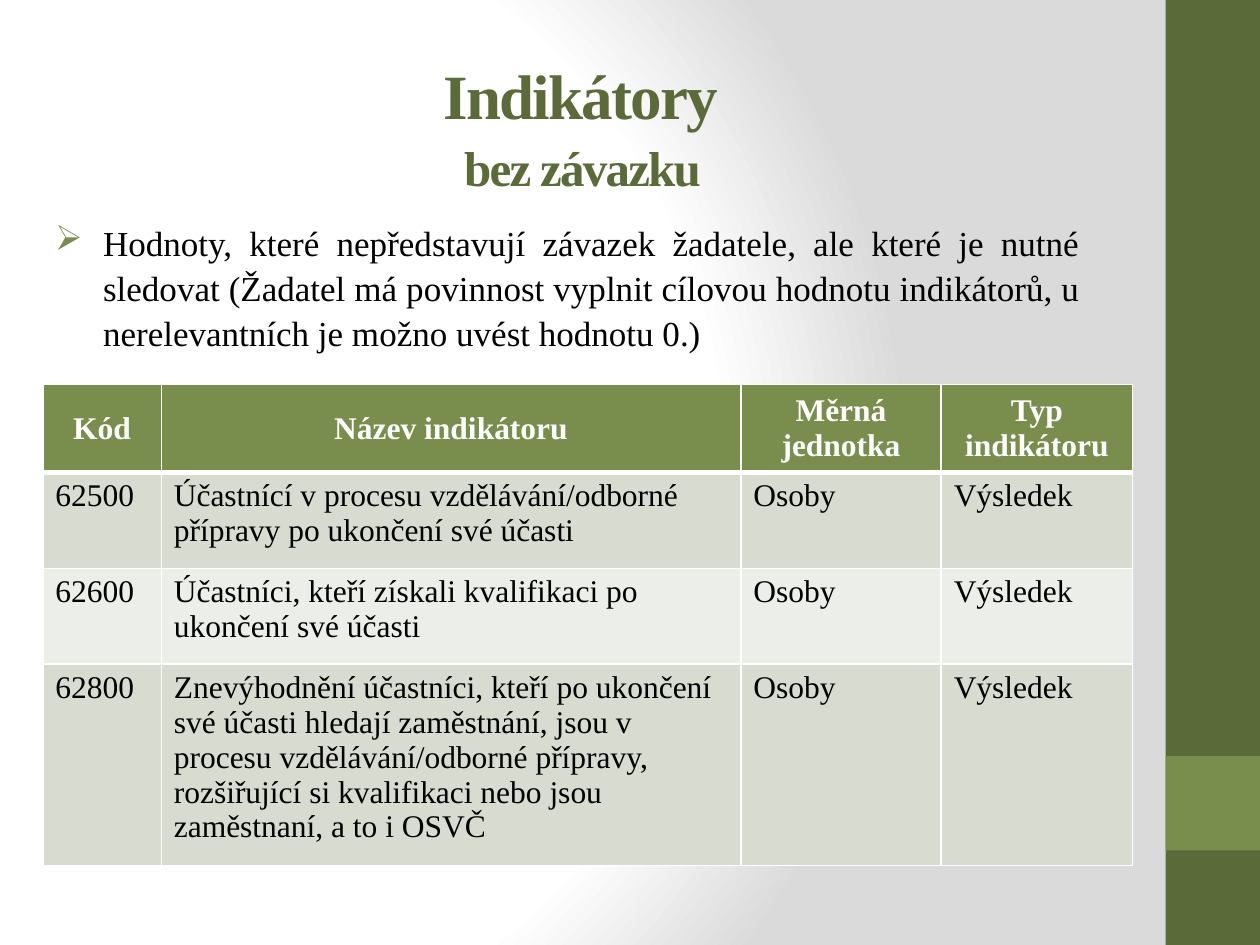
from lxml.etree import SubElement, fromstring
from pptx import Presentation
from pptx.dml.color import RGBColor
from pptx.enum.shapes import MSO_SHAPE
from pptx.enum.text import MSO_ANCHOR, PP_ALIGN
from pptx.oxml.ns import nsdecls, qn
from pptx.util import Inches, Pt

DARK_GREEN = RGBColor(0x5A, 0x6A, 0x39)
GREEN = RGBColor(0x79, 0x8E, 0x4C)
BAND_DARK = RGBColor(0xD7, 0xDB, 0xD0)
BAND_LIGHT = RGBColor(0xEC, 0xEE, 0xE9)
WHITE = RGBColor(0xFF, 0xFF, 0xFF)
BLACK = RGBColor(0x00, 0x00, 0x00)
GRAY = RGBColor(0xDA, 0xDA, 0xDA)
FONT = "Times New Roman"

TITLE = [("Indikátory ", 36), ("bez závazku ", 28)]
BODY = (
    "Hodnoty, které nepředstavují závazek žadatele, ale které je nutné sledovat "
    "(Žadatel má povinnost vyplnit cílovou hodnotu indikátorů, u nerelevantních "
    "je možno uvést hodnotu 0.)"
)
HEADER = ["Kód", "Název indikátoru", "Měrná jednotka", "Typ indikátoru"]
INDICATORS = [
    ("62500", "Účastnící v procesu vzdělávání/odborné přípravy po ukončení své účasti"),
    ("62600", "Účastníci, kteří získali kvalifikaci po ukončení své účasti"),
    ("62800", "Znevýhodnění účastníci, kteří po ukončení své účasti hledají zaměstnání, "
              "jsou v procesu vzdělávání/odborné přípravy, rozšiřující si kvalifikaci "
              "nebo jsou zaměstnaní, a to i OSVČ"),
]
ROWS = [HEADER] + [[code, name, "Osoby", "Výsledek"] for code, name in INDICATORS]
COLUMN_WIDTHS = [0.94, 4.6, 1.59, 1.52]
ROW_HEIGHTS = [0.65, 0.76, 0.76, 1.48]
SIDE_BARS = [(0, 7.5, DARK_GREEN), (6, 0.75, GREEN)]
GRADIENT_STOPS = [(0, WHITE), (75, WHITE), (100, GRAY)]


def add_run(paragraph, text, size, color, bold=False):
    run = paragraph.add_run()
    run.text = text
    for name, value in {"name": FONT, "size": Pt(size), "bold": bold}.items():
        setattr(run.font, name, value)
    run.font.color.rgb = color
    return run


def set_background(slide):
    slide.background.fill.solid()
    solid = slide.element.find(".//" + qn("p:bgPr")).find(qn("a:solidFill"))
    stops = "".join(
        f'<a:gs pos="{position * 1000}"><a:srgbClr val="{color}"/></a:gs>'
        for position, color in GRADIENT_STOPS
    )
    gradient = fromstring(
        f'<a:gradFill {nsdecls("a")} rotWithShape="1"><a:gsLst>{stops}</a:gsLst>'
        '<a:path path="circle"><a:fillToRect l="20000" t="50000" r="100000" b="50000"/>'
        "</a:path></a:gradFill>"
    )
    solid.getparent().replace(solid, gradient)


def add_side_bars(slide):
    for top, height, color in SIDE_BARS:
        bar = slide.shapes.add_shape(
            MSO_SHAPE.RECTANGLE, Inches(9.25), Inches(top), Inches(0.75), Inches(height)
        )
        bar.shadow.inherit = False
        bar.fill.solid()
        bar.fill.fore_color.rgb = color
        bar.line.fill.background()


def add_text(slide, left, top, width, height, alignment, line_spacing):
    box = slide.shapes.add_textbox(Inches(left), Inches(top), Inches(width), Inches(height))
    box.text_frame.word_wrap = True
    paragraph = box.text_frame.paragraphs[0]
    paragraph.alignment = alignment
    paragraph.line_spacing = line_spacing
    return box.text_frame, paragraph


def add_title(slide):
    frame, paragraph = add_text(slide, 0.5, 0.55, 8.33, 0.85, PP_ALIGN.CENTER, 1.1)
    frame.vertical_anchor = MSO_ANCHOR.MIDDLE
    for index, (text, size) in enumerate(TITLE):
        if index:
            paragraph.add_line_break()
        run = add_run(paragraph, text, size, DARK_GREEN, True)
        run.font._element.set("spc", "-100")


def add_body(slide):
    frame, paragraph = add_text(slide, 0.34, 1.68, 8.33, 1.2, PP_ALIGN.JUSTIFY, 1.08)
    add_run(paragraph, BODY, 20, BLACK)
    properties = paragraph._p.get_or_add_pPr()
    properties.set("marL", str(Inches(0.38)))
    properties.set("indent", str(-Inches(0.38)))
    bullet_color = SubElement(properties, qn("a:buClr"))
    SubElement(bullet_color, qn("a:srgbClr")).set("val", str(GREEN))
    SubElement(properties, qn("a:buChar")).set("char", "➢")


def set_borders(cell, bottom_width):
    properties = cell._tc.get_or_add_tcPr()
    widths = {"lnL": 1, "lnR": 1, "lnT": 1, "lnB": bottom_width}
    for index, (side, width) in enumerate(widths.items()):
        line = fromstring(
            f'<a:{side} {nsdecls("a")} w="{Pt(width)}"><a:solidFill>'
            f'<a:srgbClr val="{WHITE}"/></a:solidFill></a:{side}>'
        )
        properties.insert(index, line)


def add_indicator_table(slide):
    table = slide.shapes.add_table(
        len(ROWS), len(HEADER), Inches(0.34), Inches(3.05),
        Inches(sum(COLUMN_WIDTHS)), Inches(sum(ROW_HEIGHTS)),
    ).table
    for column, width in zip(table.columns, COLUMN_WIDTHS):
        column.width = Inches(width)
    for row_index, (row, height, texts) in enumerate(zip(table.rows, ROW_HEIGHTS, ROWS)):
        row.height = Inches(height)
        is_header = row_index == 0
        band = GREEN if is_header else (BAND_LIGHT, BAND_DARK)[row_index % 2]
        for cell, text in zip(row.cells, texts):
            cell.fill.solid()
            cell.fill.fore_color.rgb = band
            paragraph = cell.text_frame.paragraphs[0]
            add_run(paragraph, text, 18, WHITE if is_header else BLACK, is_header)
            if is_header:
                paragraph.alignment = PP_ALIGN.CENTER
                cell.vertical_anchor = MSO_ANCHOR.MIDDLE
            set_borders(cell, 3 if is_header else 1)
            if row_index == 1:
                cell._tc.tcPr.find(qn("a:lnT")).set("w", str(Pt(3)))


def main():
    presentation = Presentation()
    presentation.slide_width = Inches(10)
    presentation.slide_height = Inches(7.5)
    slide = presentation.slides.add_slide(presentation.slide_layouts[6])
    set_background(slide)
    add_side_bars(slide)
    add_title(slide)
    add_body(slide)
    add_indicator_table(slide)
    presentation.save("out.pptx")


if __name__ == "__main__":
    main()
